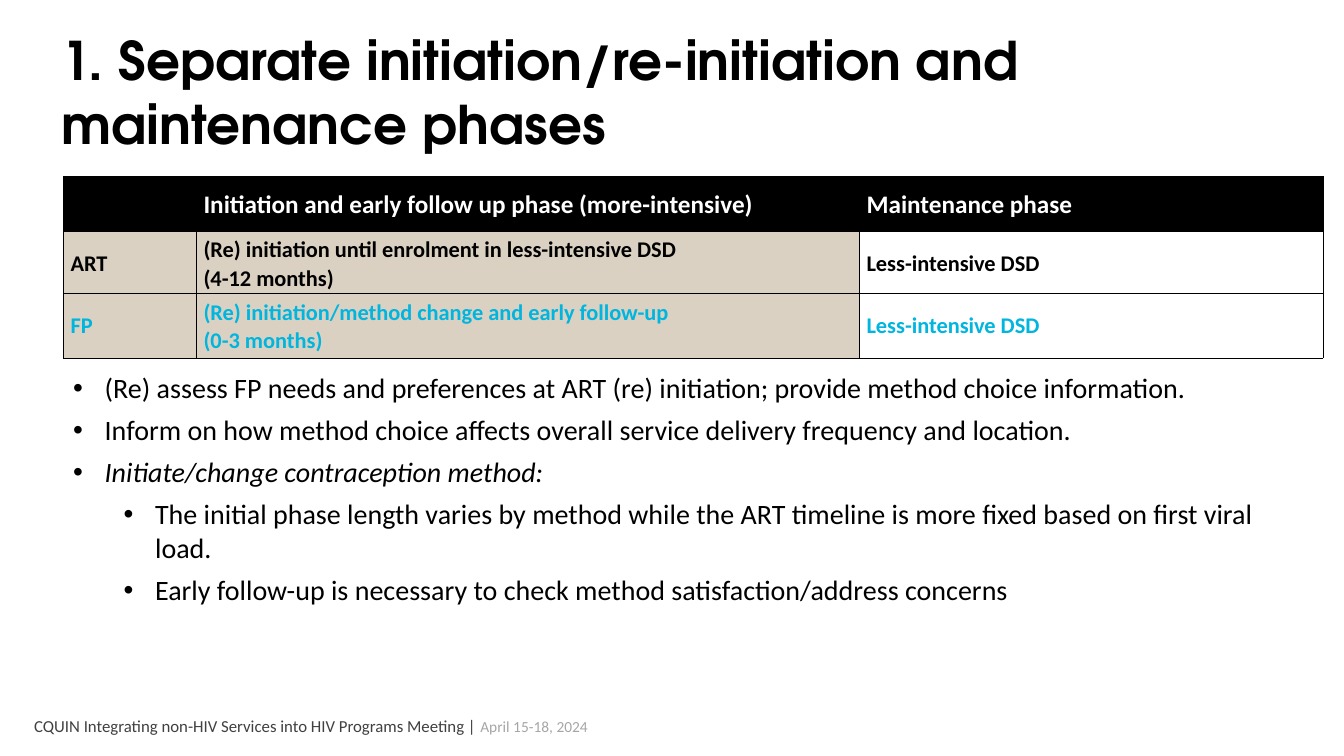
from collections import namedtuple
from dataclasses import dataclass

from lxml import etree
from pptx import Presentation
from pptx import util as u
from pptx.dml.color import RGBColor
from pptx.enum import text as t
from pptx.oxml.ns import qn

Box = namedtuple("Box", "left top width height")


@dataclass(frozen=True)
class Theme:
    heading_font: str = "TeX Gyre Adventor"
    body_font: str = "Calibri"
    black: str = "000000"
    white: str = "FFFFFF"
    sand: str = "DBD1C2"
    cyan: str = "00B5DE"
    dark_grey: str = "404040"
    light_grey: str = "A6A6A6"
    title_size: float = 38
    bullet_size: float = 20
    header_size: float = 18
    cell_size: float = 16
    footer_size: float = 12
    date_size: float = 11


THEME = Theme()
COLUMN_WIDTHS = (95, 473.6, 331.4)


def points(values):
    return [u.Pt(value) for value in values]


def write(paragraph, words, size, color=THEME.black, font=THEME.body_font,
          bold=False, italic=False, spacing=None, after=None):
    run = paragraph.add_run()
    run.text = words
    run.font.name = font
    run.font.size = u.Pt(size)
    run.font.bold = bold
    run.font.italic = italic
    run.font.color.rgb = RGBColor.from_string(color)
    if spacing:
        paragraph.line_spacing = spacing
    if after is not None:
        paragraph.space_after = u.Pt(after)


def next_paragraph(frame, index):
    return frame.add_paragraph() if index else frame.paragraphs[0]


def add_heading(slide, box):
    heading = slide.shapes.title
    heading.left, heading.top, heading.width, heading.height = points(box)
    frame = heading.text_frame
    frame.word_wrap = True
    frame.auto_size = t.MSO_AUTO_SIZE.NONE
    frame.vertical_anchor = t.MSO_ANCHOR.TOP
    paragraph = frame.paragraphs[0]
    paragraph.alignment = t.PP_ALIGN.LEFT
    write(paragraph, "1. Separate initiation/re-initiation and maintenance phases",
          THEME.title_size, font=THEME.heading_font, bold=True, spacing=1.0)


def add_borders(cell):
    properties = cell._tc.get_or_add_tcPr()
    for index, side in enumerate(("a:lnL", "a:lnR", "a:lnT", "a:lnB")):
        line = etree.Element(qn(side), w=str(u.Pt(0.25)))
        fill = etree.SubElement(line, qn("a:solidFill"))
        etree.SubElement(fill, qn("a:srgbClr"), val=THEME.black)
        properties.insert(index, line)


def fill_cell(cell, lines, fill, size, color):
    cell.fill.solid()
    cell.fill.fore_color.rgb = RGBColor.from_string(fill)
    cell.vertical_anchor = t.MSO_ANCHOR.MIDDLE
    cell.margin_left = cell.margin_right = u.Pt(5.2)
    cell.margin_top = cell.margin_bottom = u.Pt(2.9)
    add_borders(cell)
    for index, words in enumerate(lines):
        write(next_paragraph(cell.text_frame, index), words, size,
              color=color, bold=True, spacing=1.05)


def add_phase_table(slide, box, rows, heights):
    table = slide.shapes.add_table(len(rows), len(COLUMN_WIDTHS), *points(box)).table
    table.first_row = table.horz_banding = False
    for column, width in zip(table.columns, COLUMN_WIDTHS):
        column.width = u.Pt(width)
    for r, (row, height) in enumerate(zip(rows, heights)):
        table.rows[r].height = u.Pt(height)
        contents, fills, size, color = row
        for c, (lines, fill) in enumerate(zip(contents, fills)):
            fill_cell(table.cell(r, c), lines, fill, size, color)


def add_bullets(slide, box):
    points_made = (
        (0, False, "(Re) assess FP needs and preferences at ART (re) initiation; "
                   "provide method choice information."),
        (0, False, "Inform on how method choice affects overall service delivery "
                   "frequency and location."),
        (0, True, "Initiate/change contraception method:"),
        (1, False, "The initial phase length varies by method while the ART timeline "
                   "is more fixed based on first viral load."),
        (1, False, "Early follow-up is necessary to check method "
                   "satisfaction/address concerns"),
    )
    frame = slide.shapes.add_textbox(*points(box)).text_frame
    frame.word_wrap = True
    frame.auto_size = t.MSO_AUTO_SIZE.SHAPE_TO_FIT_TEXT
    for index, (level, italic, words) in enumerate(points_made):
        paragraph = next_paragraph(frame, index)
        paragraph.level = level
        properties = paragraph._p.get_or_add_pPr()
        properties.set("marL", str(u.Pt(22.5 + 36 * level)))
        properties.set("indent", str(u.Pt(-22.5)))
        etree.SubElement(properties, qn("a:buFont"), typeface="Arial")
        etree.SubElement(properties, qn("a:buChar"), char="•")
        write(paragraph, words, THEME.bullet_size, italic=italic, after=6)


def add_footer(slide, box):
    frame = slide.shapes.add_textbox(*points(box)).text_frame
    frame.word_wrap = True
    frame.vertical_anchor = t.MSO_ANCHOR.MIDDLE
    paragraph = frame.paragraphs[0]
    write(paragraph, "CQUIN Integrating non-HIV Services into HIV Programs Meeting | ",
          THEME.footer_size, color=THEME.dark_grey)
    write(paragraph, "April 15-18, 2024", THEME.date_size, color=THEME.light_grey)


def main():
    deck = Presentation()
    deck.slide_width, deck.slide_height = points((960, 540))
    slide = deck.slides.add_slide(deck.slide_layouts[5])

    header = (((), ("Initiation and early follow up phase (more-intensive)",),
               ("Maintenance phase",)),
              (THEME.black,) * 3, THEME.header_size, THEME.white)
    phase_fills = (THEME.sand, THEME.sand, THEME.white)
    art = ((("ART",), ("(Re) initiation until enrolment in less-intensive DSD",
                       "(4-12 months)"), ("Less-intensive DSD",)),
           phase_fills, THEME.cell_size, THEME.black)
    family_planning = ((("FP",), ("(Re) initiation/method change and early follow-up",
                                  "(0-3 months)"), ("Less-intensive DSD",)),
                       phase_fills, THEME.cell_size, THEME.cyan)

    left, width = 45.2, sum(COLUMN_WIDTHS)
    add_footer(slide, Box(17.3, 504, 496.8, 28.8))
    add_heading(slide, Box(36.7, 15.8, 886.3, 99.4))
    add_phase_table(slide, Box(left, 126, width, 83.5), (header, art), (38.9, 44.6))
    add_phase_table(slide, Box(left, 209.5, width, 44.6), (family_planning,), (44.6,))
    add_bullets(slide, Box(left, 261.4, width, 177.1))
    deck.save("out.pptx")


if __name__ == "__main__":
    main()
